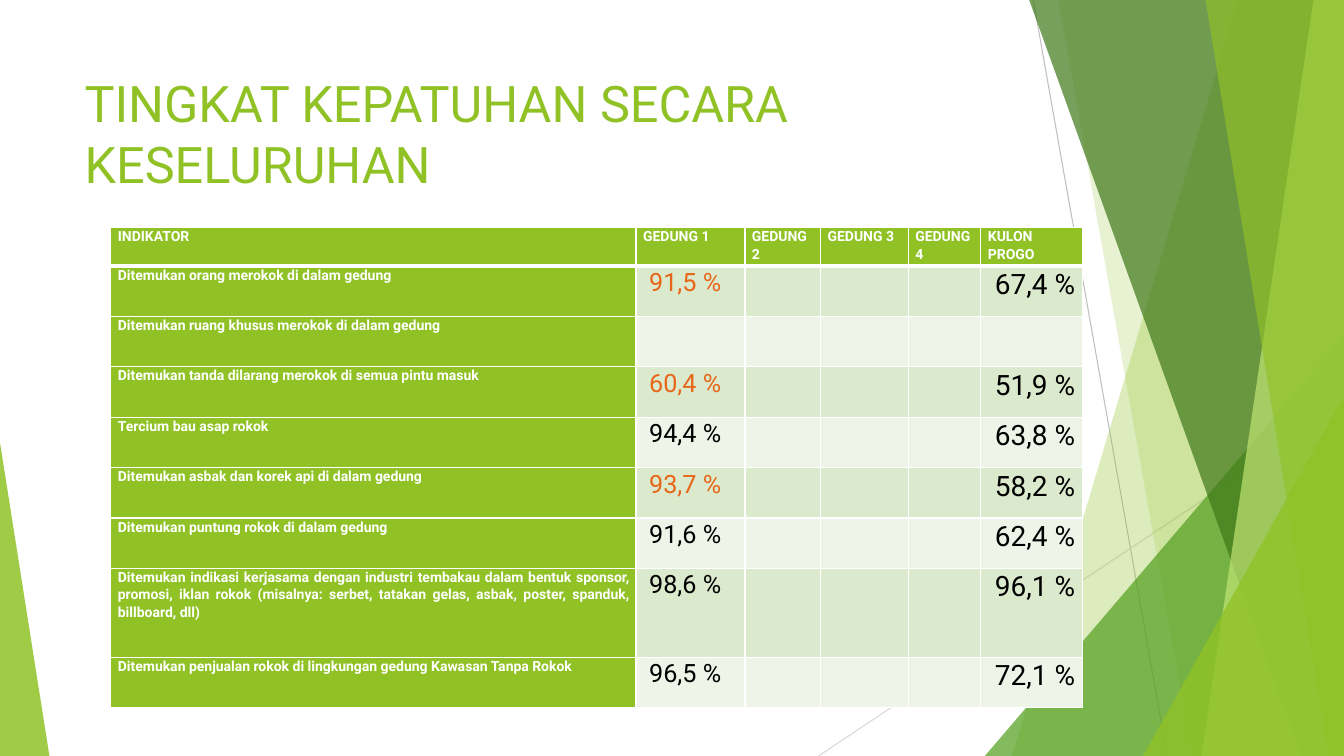
from dataclasses import dataclass
from typing import Optional

from pptx import Presentation, oxml, util as u
from pptx.dml import color as clr
from pptx.enum import shapes, text
from pptx.oxml import ns


@dataclass(frozen=True)
class Theme:
    font: str = "Roboto"
    lime: str = "90C226"
    leaf: str = "54A021"
    moss: str = "3F7819"
    pale: str = "C0E474"
    odd: str = "DBE9CD"
    even: str = "EEF4E8"
    white: str = "FFFFFF"
    black: str = "000000"
    warm: str = "E76618"
    gray: str = "BFBFBF"
    light: str = "D9D9D9"
    title: float = 36
    label: float = 10
    value: float = 18
    total: float = 20
    hair: float = 0.75
    rule: float = 1
    thick: float = 3


@dataclass(frozen=True)
class Thread:
    x1: float
    y1: float
    x2: float
    y2: float
    tint: str


@dataclass(frozen=True)
class Band:
    """Full-height area from a slanted left edge to the slide's right side."""
    top: float
    foot: float
    tint: str
    alpha: int


@dataclass(frozen=True)
class Wedge:
    """Right triangle standing on the slide's bottom edge."""
    left: float
    top: float
    wide: float
    peak: float
    tint: str
    alpha: int


@dataclass(frozen=True)
class Item:
    label: str
    first: str = ""
    total: str = ""
    warm: bool = False
    high: float = 6.67


@dataclass(frozen=True)
class Style:
    size: float
    tint: str
    bold: bool = False
    left: float = 0.07
    right: float = 0.07
    align: Optional[text.PP_ALIGN] = None


T = Theme()
WIDE, HIGH = u.Inches(13.333), u.Inches(7.5)

# All places and sizes are percentages of the slide's width or height.
THREADS = [Thread(76.88, 0, 86.85, 100, T.gray),
           Thread(100, 53.73, 60.9, 100, T.light)]
FACETS = [
    Band(92.1, 75.3, T.lime, 30),
    Band(78.75, 88.73, T.lime, 20),
    Wedge(73.28, 44.4, 26.72, 1, T.leaf, 72),
    Band(76.58, 96.83, T.moss, 70),
    Band(97.73, 89.4, T.pale, 70),
    Band(89.7, 98.85, T.lime, 65),
    Wedge(85.05, 52.4, 14.95, 1, T.lime, 80),
    Wedge(0, 58.53, 3.68, 0, T.lime, 85),
]
COLS = [39.08, 8.1, 5.63, 6.53, 5.4, 7.58]
HEADS = ["INDIKATOR", *(f"GEDUNG {n}" for n in range(1, 5)), "KULON PROGO"]
HEAD_HIGH = 5.07
ITEMS = [
    Item("Ditemukan orang merokok di dalam gedung", "91,5 %", "67,4 %", True),
    Item("Ditemukan ruang khusus merokok di dalam gedung"),
    Item("Ditemukan tanda dilarang merokok di semua pintu masuk",
         "60,4 %", "51,9 %", True),
    Item("Tercium bau asap rokok", "94,4 %", "63,8 %"),
    Item("Ditemukan asbak dan korek api di dalam gedung",
         "93,7 %", "58,2 %", True),
    Item("Ditemukan puntung rokok di dalam gedung", "91,6 %", "62,4 %"),
    Item("Ditemukan indikasi kerjasama dengan industri tembakau dalam bentuk "
         "sponsor, promosi, iklan rokok (misalnya: serbet, tatakan gelas, "
         "asbak, poster, spanduk, billboard, dll)",
         "98,6 %", "96,1 %", high=11.73),
    Item("Ditemukan penjualan rokok di lingkungan gedung Kawasan Tanpa Rokok",
         "96,5 %", "72,1 %"),
]


def across(share: float) -> int:
    return round(WIDE * share / 100)


def down(share: float) -> int:
    return round(HIGH * share / 100)


def rgb(tint: str) -> clr.RGBColor:
    return clr.RGBColor.from_string(tint)


def paint(shape, tint: str, alpha: int) -> None:
    shape.shadow.inherit = False
    shape.line.fill.background()
    shape.fill.solid()
    shape.fill.fore_color.rgb = rgb(tint)
    node = shape._element.spPr.find(".//" + ns.qn("a:srgbClr"))
    node.append(oxml.parse_xml(
        f'<a:alpha {ns.nsdecls("a")} val="{alpha * 1000}"/>'))


def draw_thread(slide, thread: Thread) -> None:
    line = slide.shapes.add_connector(
        shapes.MSO_CONNECTOR.STRAIGHT, across(thread.x1), down(thread.y1),
        across(thread.x2), down(thread.y2))
    line.line.color.rgb = rgb(thread.tint)
    line.line.width = u.Pt(T.hair)
    line._element.spPr.append(
        oxml.parse_xml(f'<a:effectLst {ns.nsdecls("a")}/>'))


def draw_band(slide, band: Band) -> None:
    path = slide.shapes.build_freeform(across(band.top), 0)
    path.add_line_segments(
        [(WIDE, 0), (WIDE, HIGH), (across(band.foot), HIGH)], close=True)
    paint(path.convert_to_shape(), band.tint, band.alpha)


def draw_wedge(slide, wedge: Wedge) -> None:
    shape = slide.shapes.add_shape(
        shapes.MSO_SHAPE.ISOSCELES_TRIANGLE, across(wedge.left),
        down(wedge.top), across(wedge.wide), down(100 - wedge.top))
    shape.adjustments[0] = wedge.peak
    paint(shape, wedge.tint, wedge.alpha)


def style_run(run, size: float, tint: str, bold: bool = False) -> None:
    run.font.name = T.font
    run.font.size = u.Pt(size)
    run.font.bold = bold
    run.font.color.rgb = rgb(tint)


def draw_title(slide, words: str) -> None:
    box = slide.shapes.add_textbox(
        across(5.55), down(8.93), across(70.5), down(19.2))
    frame = box.text_frame
    frame.word_wrap = True
    frame.text = words
    style_run(frame.paragraphs[0].runs[0], T.title, T.lime)


def edge_cell(cell, top: float, foot: float) -> None:
    """Give a cell white borders; widths in points."""
    props = cell._tc.get_or_add_tcPr()
    sides = {"L": T.rule, "R": T.rule, "T": top, "B": foot}
    for spot, (side, width) in enumerate(sides.items()):
        props.insert(spot, oxml.parse_xml(
            f'<a:ln{side} {ns.nsdecls("a")} w="{u.Pt(width)}"><a:solidFill>'
            f'<a:srgbClr val="{T.white}"/></a:solidFill></a:ln{side}>'))


def fill_cell(cell, words: str, style: Style, back: str) -> None:
    cell.fill.solid()
    cell.fill.fore_color.rgb = rgb(back)
    cell.margin_left, cell.margin_right = map(
        u.Inches, (style.left, style.right))
    cell.margin_top = cell.margin_bottom = 0
    if words:
        para = cell.text_frame.paragraphs[0]
        para.text = words
        para.line_spacing = 1.07
        para.alignment = style.align
        style_run(para.runs[0], style.size, style.tint, style.bold)


def draw_table(slide) -> None:
    highs = [HEAD_HIGH, *(item.high for item in ITEMS)]
    grid = slide.shapes.add_table(
        len(highs), len(COLS), across(8.25), down(30.13),
        across(sum(COLS)), down(sum(highs))).table
    for col, share in zip(grid.columns, COLS):
        col.width = across(share)
    for row, share in zip(grid.rows, highs):
        row.height = down(share)

    head = Style(T.label, T.white, True)
    label = Style(T.label, T.white, True, align=text.PP_ALIGN.JUSTIFY)
    total = Style(T.total, T.black, left=0.14, right=0.03)
    rows = [[(words, head, T.lime) for words in HEADS]]
    for num, item in enumerate(ITEMS):
        back = T.even if num % 2 else T.odd
        first = Style(T.value, T.warm if item.warm else T.black,
                      left=0.13, right=0.03)
        rows.append([(item.label, label, T.lime), (item.first, first, back),
                     *[("", first, back)] * 3, (item.total, total, back)])
    for r, row in enumerate(rows):
        for c, (words, style, back) in enumerate(row):
            cell = grid.cell(r, c)
            fill_cell(cell, words, style, back)
            edge_cell(cell, T.thick if r == 1 else T.rule,
                      T.thick if r == 0 else T.rule)


def main() -> None:
    deck = Presentation()
    deck.slide_width, deck.slide_height = WIDE, HIGH
    slide = deck.slides.add_slide(deck.slide_layouts[6])
    for thread in THREADS:
        draw_thread(slide, thread)
    for facet in FACETS:
        if isinstance(facet, Band):
            draw_band(slide, facet)
        else:
            draw_wedge(slide, facet)
    draw_title(slide, "TINGKAT KEPATUHAN SECARA KESELURUHAN")
    draw_table(slide)
    deck.save("out.pptx")


if __name__ == "__main__":
    main()
